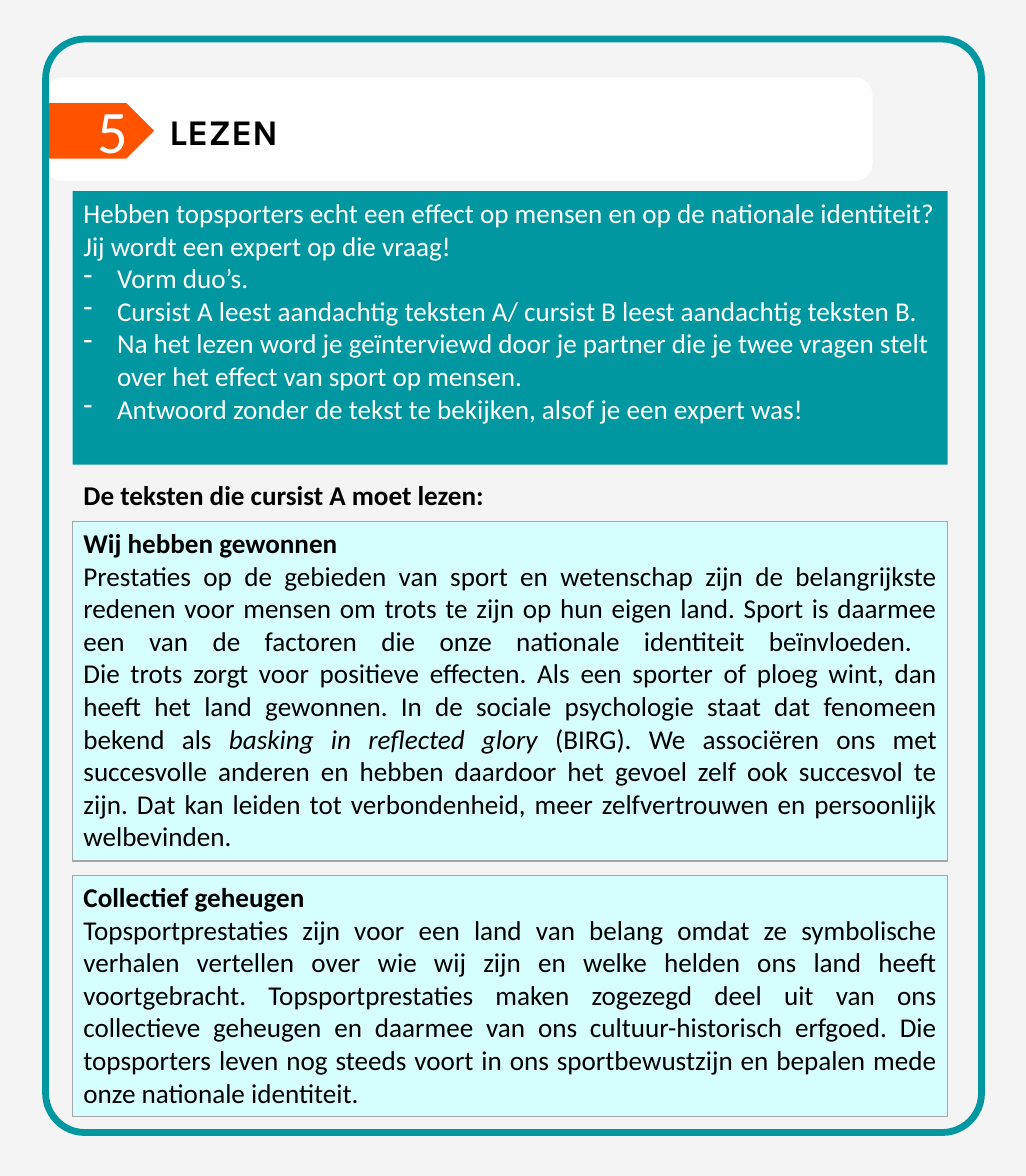
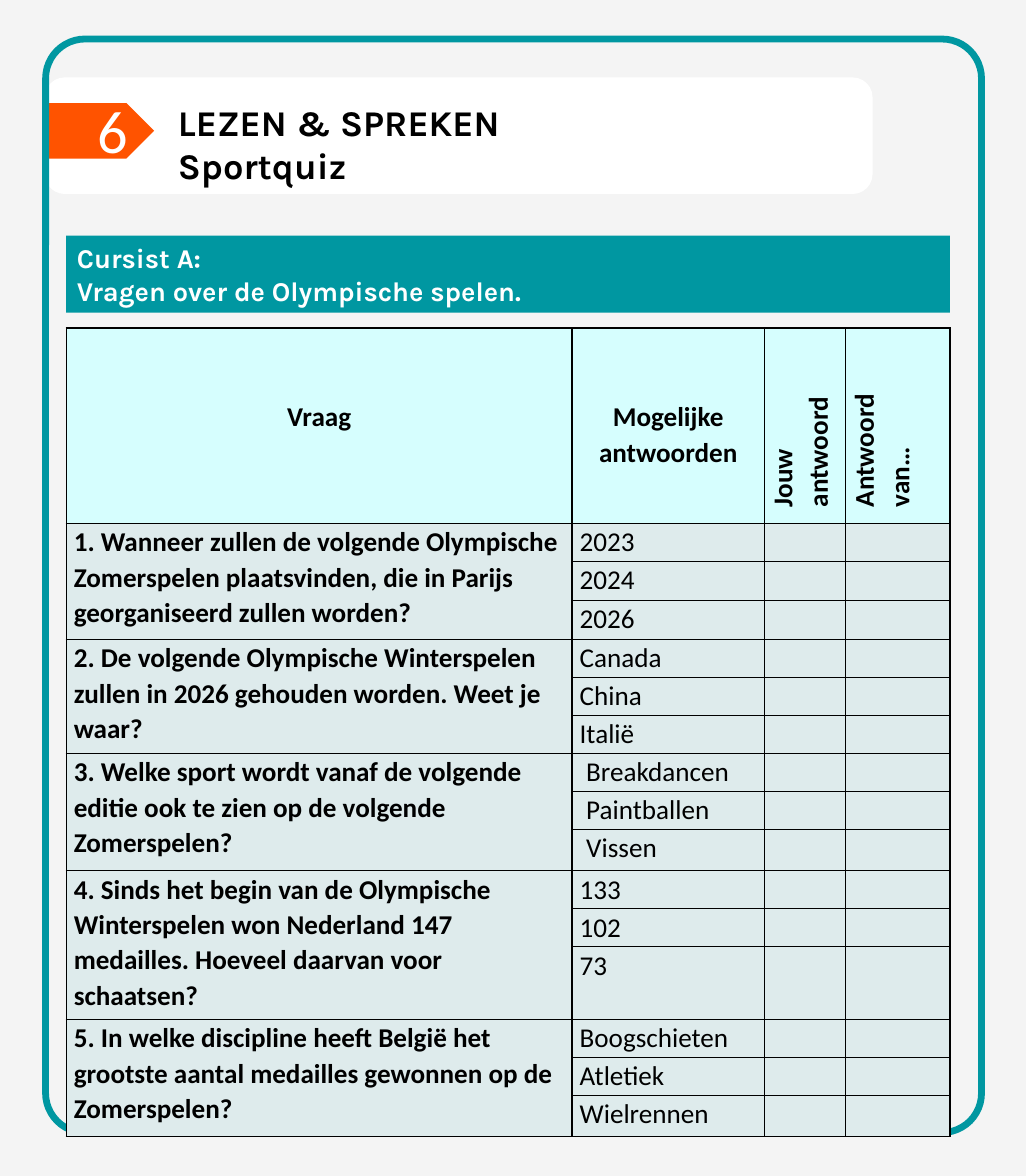
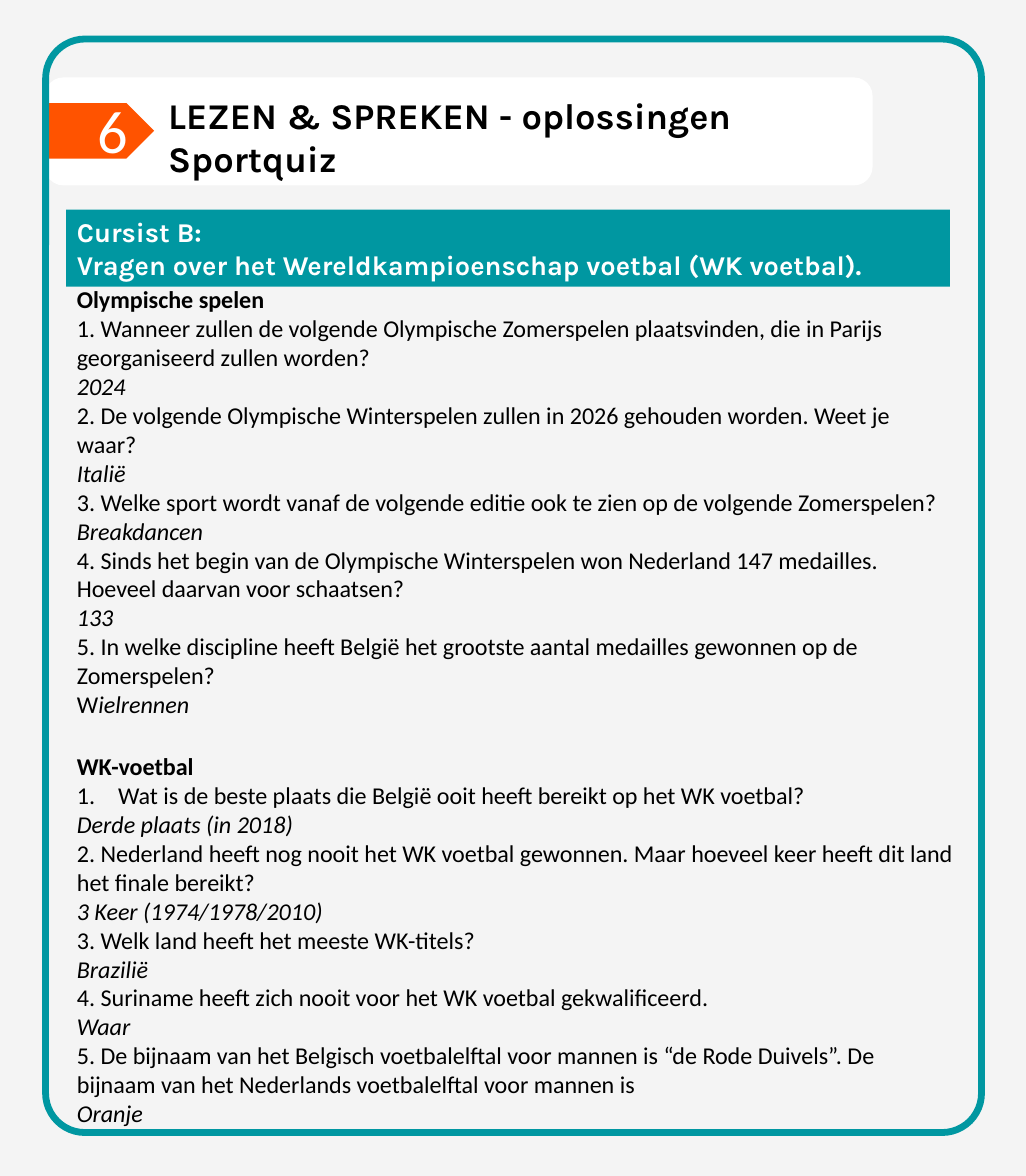
from dataclasses import dataclass

from lxml import etree
from pptx import Presentation
from pptx.dml.color import RGBColor
from pptx.enum.shapes import MSO_SHAPE
from pptx.enum.text import MSO_ANCHOR, PP_ALIGN
from pptx.oxml.ns import qn
from pptx.util import Inches, Pt

RECT, ROUNDED, TAG = MSO_SHAPE.RECTANGLE, MSO_SHAPE.ROUNDED_RECTANGLE, MSO_SHAPE.PENTAGON
LEFT, CENTER, JUSTIFY = PP_ALIGN.LEFT, PP_ALIGN.CENTER, PP_ALIGN.JUSTIFY
TOP, MIDDLE = MSO_ANCHOR.TOP, MSO_ANCHOR.MIDDLE


@dataclass(frozen=True)
class Theme:
    paper: str = "F4F4F4"
    white: str = "FFFFFF"
    ink: str = "000000"
    teal: str = "0097A1"
    orange: str = "FF5300"
    aqua: str = "D6FEFE"
    mist: str = "DEEBEC"
    grey: str = "A6A6A6"
    body: str = "Calibri"
    display: str = "Karla"
    number_size: int = 40
    title_size: int = 24
    text_size: int = 18
    answer_size: int = 16


T = Theme()
WIDTH, HEIGHT = 9.45, 10.83
PANEL_LEFT, PANEL_WIDTH = 0.67, 8.06
QUIZ_LEFT, QUIZ_WIDTH = 0.61, 8.14

# Paragraphs are (kind, text); underscores switch italics on and off.
INSTRUCTIONS = [
    ("plain", "Hebben topsporters echt een effect op mensen en op de nationale identiteit?"),
    ("plain", "Jij wordt een expert op die vraag!"),
    ("dash", "Vorm duo’s."),
    ("dash", "Cursist A leest aandachtig teksten A/ cursist B leest aandachtig teksten B."),
    ("dash", "Na het lezen word je geïnterviewd door je partner die je twee vragen stelt "
             "over het effect van sport op mensen."),
    ("dash", "Antwoord zonder de tekst te bekijken, alsof je een expert was!"),
]
READING_LABEL = [("bold", "De teksten die cursist A moet lezen:")]
READINGS = [
    (4.8, 3.13, [
        ("bold", "Wij hebben gewonnen"),
        ("plain", "Prestaties op de gebieden van sport en wetenschap zijn de belangrijkste redenen "
                  "voor mensen om trots te zijn op hun eigen land. Sport is daarmee een van de "
                  "factoren die onze nationale identiteit beïnvloeden. \n"
                  "Die trots zorgt voor positieve effecten. Als een sporter of ploeg wint, dan heeft "
                  "het land gewonnen. In de sociale psychologie staat dat fenomeen bekend als "
                  "_basking in reflected glory_ (BIRG). We associëren ons met succesvolle anderen "
                  "en hebben daardoor het gevoel zelf ook succesvol te zijn. Dat kan leiden tot "
                  "verbondenheid, meer zelfvertrouwen en persoonlijk welbevinden."),
    ]),
    (8.06, 2.22, [
        ("bold", "Collectief geheugen"),
        ("plain", "Topsportprestaties zijn voor een land van belang omdat ze symbolische verhalen "
                  "vertellen over wie wij zijn en welke helden ons land heeft voortgebracht. "
                  "Topsportprestaties maken zogezegd deel uit van ons collectieve geheugen en daarmee "
                  "van ons cultuur-historisch erfgoed. Die topsporters leven nog steeds voort in ons "
                  "sportbewustzijn en bepalen mede onze nationale identiteit."),
    ]),
]

QUIZ_HEADINGS = ["Vraag", "Mogelijke antwoorden", "Jouw antwoord", "Antwoord van…"]
OLYMPIC_QUIZ = [
    ("1. Wanneer zullen de volgende Olympische Zomerspelen plaatsvinden, die in Parijs "
     "georganiseerd zullen worden?", ["2023", "2024", "2026"], "_2024_"),
    ("2. De volgende Olympische Winterspelen zullen in 2026 gehouden worden. Weet je waar?",
     ["Canada", "China", "Italië"], "_Italië_"),
    ("3. Welke sport wordt vanaf de volgende editie ook te zien op de volgende Zomerspelen?",
     ["Breakdancen", "Paintballen", "Vissen"], "_Breakdancen_"),
    ("4. Sinds het begin van de Olympische Winterspelen won Nederland 147 medailles. "
     "Hoeveel daarvan voor schaatsen?", ["133", "102", "73"], "_133_"),
    ("5. In welke discipline heeft België het grootste aantal medailles gewonnen op de "
     "Zomerspelen?", ["Boogschieten", "Atletiek", "Wielrennen"], "W_ielrennen_"),
]
INDENTED_QUESTION = 2
QUIZ_COLUMNS = [4.66, 1.77, 0.75, 0.96]
QUIZ_ROWS = [1.8, 0.35, 0.36, 0.36] + [0.35] * 5 + [0.38, 0.35, 0.35, 0.67, 0.35, 0.35, 0.38]
QUIZ_ROWS[0] = 1.8

FOOTBALL_ANSWERS = [
    ("bold", "WK-voetbal"),
    ("number", "Wat is de beste plaats die België ooit heeft bereikt op het WK voetbal?"),
    ("plain", "_Derde plaats (in 2018)_"),
    ("plain", "2. Nederland heeft nog nooit het WK voetbal gewonnen. Maar hoeveel keer heeft dit "
              "land het finale bereikt?"),
    ("plain", "_3 Keer (1974/1978/2010)_"),
    ("plain", "3. Welk land heeft het meeste WK-titels?"),
    ("plain", "_Brazilië_"),
    ("plain", "4. Suriname heeft zich nooit voor het WK voetbal gekwalificeerd."),
    ("plain", "_Waar_"),
    ("plain", "5. De bijnaam van het Belgisch voetbalelftal voor mannen is “de Rode Duivels”. De "
              "bijnaam van het Nederlands voetbalelftal voor mannen is"),
    ("plain", "_Oranje_"),
]


def rgb(color):
    return RGBColor.from_string(color)


def set_bullet(paragraph, indent, tag, **attributes):
    properties = paragraph._p.get_or_add_pPr()
    properties.set("marL", str(Inches(indent)))
    properties.set("indent", str(-Inches(indent)))
    etree.SubElement(properties, qn(tag), attributes)


def write(frame, paragraphs, size=T.text_size, color=T.ink, font=T.body, align=LEFT, spacing=None):
    for index, (kind, text) in enumerate(paragraphs):
        paragraph = frame.paragraphs[0] if index == 0 else frame.add_paragraph()
        paragraph.alignment = align
        if spacing:
            paragraph.line_spacing = spacing
        if kind == "dash":
            set_bullet(paragraph, 0.31, "a:buChar", char="-")
        elif kind == "number":
            set_bullet(paragraph, 0.38, "a:buAutoNum", type="arabicPeriod")
        for part, passage in enumerate(text.split("_")):
            for line, words in enumerate(passage.split("\n")):
                if line:
                    paragraph.add_line_break()
                if words:
                    run = paragraph.add_run()
                    run.text = words
                    run.font.name, run.font.size = font, Pt(size)
                    run.font.color.rgb = rgb(color)
                    run.font.bold, run.font.italic = kind == "bold", part % 2 == 1


def add_text(slide, box, paragraphs, wrap=True, **style):
    frame = slide.shapes.add_textbox(*map(Inches, box)).text_frame
    frame.word_wrap = wrap
    write(frame, paragraphs, **style)


def add_panel(slide, preset, box, fill=None, line=None, weight=1, radius=None):
    panel = slide.shapes.add_shape(preset, *map(Inches, box))
    panel.shadow.inherit = False
    if radius is not None:
        panel.adjustments[0] = radius
    if fill:
        panel.fill.solid()
        panel.fill.fore_color.rgb = rgb(fill)
    else:
        panel.fill.background()
    if line:
        panel.line.color.rgb = rgb(line)
        panel.line.width = Pt(weight)
    else:
        panel.line.fill.background()
    panel.text_frame.word_wrap = True
    panel.text_frame.vertical_anchor = TOP
    return panel.text_frame


def add_page(deck, number, title, title_box, band_height):
    slide = deck.slides.add_slide(deck.slide_layouts[6])
    slide.background.fill.solid()
    slide.background.fill.fore_color.rgb = rgb(T.paper)
    add_panel(slide, ROUNDED, (0.42, 0.72, 7.61, band_height), T.white, T.white)
    add_panel(slide, TAG, (0.42, 0.95, 1, 0.51), T.orange)
    add_text(slide, (0.8, 0.81, 0.46, 0.77), [("plain", number)],
             size=T.number_size, color=T.white)
    add_panel(slide, ROUNDED, (0.42, 0.36, 8.62, 10.07), line=T.teal, weight=4.5, radius=0.042)
    add_text(slide, title_box, [("bold", line) for line in title],
             size=T.title_size, font=T.display)
    return slide


def add_quiz_header(slide, top, lines):
    header = add_panel(slide, RECT, (QUIZ_LEFT, top, QUIZ_WIDTH, 0.71), T.teal)
    header.vertical_anchor = MIDDLE
    write(header, [("bold", line) for line in lines], color=T.white, font=T.display)


def style_cell(cell, fill):
    cell.margin_left = cell.margin_right = Inches(0.07)
    cell.margin_top = cell.margin_bottom = 0
    properties = cell._tc.get_or_add_tcPr()
    for side in ("a:lnL", "a:lnR", "a:lnT", "a:lnB"):
        border = etree.SubElement(properties, qn(side), w=str(Pt(1)))
        ink = etree.SubElement(border, qn("a:solidFill"))
        etree.SubElement(ink, qn("a:srgbClr"), val=T.ink)
    cell.fill.solid()
    cell.fill.fore_color.rgb = rgb(fill)


def add_quiz_table(slide, top):
    table = slide.shapes.add_table(
        len(QUIZ_ROWS), len(QUIZ_COLUMNS), Inches(QUIZ_LEFT), Inches(top),
        Inches(QUIZ_WIDTH), Inches(sum(QUIZ_ROWS))).table
    for column, width in zip(table.columns, QUIZ_COLUMNS):
        column.width = Inches(width)
    for index, (row, height) in enumerate(zip(table.rows, QUIZ_ROWS)):
        row.height = Inches(height)
        for cell in row.cells:
            style_cell(cell, T.mist if index else T.aqua)
    for column, heading in enumerate(QUIZ_HEADINGS):
        cell = table.cell(0, column)
        upright = column < 2
        write(cell.text_frame, [("bold", heading)], align=CENTER if upright else LEFT, spacing=1.07)
        if upright:
            cell.margin_top = Inches(0.65)
        else:
            cell._tc.get_or_add_tcPr().set("vert", "vert270")
            cell.text_frame.paragraphs[0]._p.get_or_add_pPr().set("marL", str(Inches(0.08)))
    for number, (question, options, _) in enumerate(OLYMPIC_QUIZ):
        first = 1 + number * len(options)
        asked = table.cell(first, 0)
        asked.merge(table.cell(first + len(options) - 1, 0))
        write(asked.text_frame, [("bold", question)], spacing=1.07)
        for offset, option in enumerate(options):
            cell = table.cell(first + offset, 1)
            if number == INDENTED_QUESTION:
                cell.margin_left = Inches(0.13)
            write(cell.text_frame, [("plain", option)], spacing=1.07)


def main():
    deck = Presentation()
    deck.slide_width, deck.slide_height = Inches(WIDTH), Inches(HEIGHT)

    reading = add_page(deck, "5", ["LEZEN"], (1.46, 0.96, 6.58, 0.5), 0.94)
    write(add_panel(reading, RECT, (PANEL_LEFT, 1.76, PANEL_WIDTH, 2.52), T.teal),
          INSTRUCTIONS, color=T.white)
    add_text(reading, (PANEL_LEFT, 4.36, 4.02, 0.4), READING_LABEL, wrap=False)
    for top, height, story in READINGS:
        write(add_panel(reading, RECT, (PANEL_LEFT, top, PANEL_WIDTH, height),
                        T.aqua, T.grey, 0.75), story, align=JUSTIFY)

    quiz = add_page(deck, "6", ["LEZEN & SPREKEN", "Sportquiz"], (1.54, 0.87, 6.58, 0.91), 1.06)
    add_quiz_header(quiz, 2.17, ["Cursist A:", "Vragen over de Olympische spelen."])
    add_quiz_table(quiz, 3.02)

    solutions = add_page(deck, "6", ["LEZEN & SPREKEN - oplossingen", "Sportquiz"],
                         (1.45, 0.81, 6.58, 0.91), 0.98)
    add_quiz_header(solutions, 1.93, ["Cursist B:",
                                      "Vragen over het Wereldkampioenschap voetbal (WK voetbal)."])
    olympic_answers = [("bold", "Olympische spelen")]
    for question, _, answer in OLYMPIC_QUIZ:
        olympic_answers += [("plain", question), ("plain", answer)]
    add_text(solutions, (QUIZ_LEFT, 2.57, QUIZ_WIDTH, 4.68), olympic_answers, size=T.answer_size)
    add_text(solutions, (QUIZ_LEFT, 6.87, 8.29, 3.6), FOOTBALL_ANSWERS, size=T.answer_size)

    deck.save("out.pptx")


if __name__ == "__main__":
    main()
